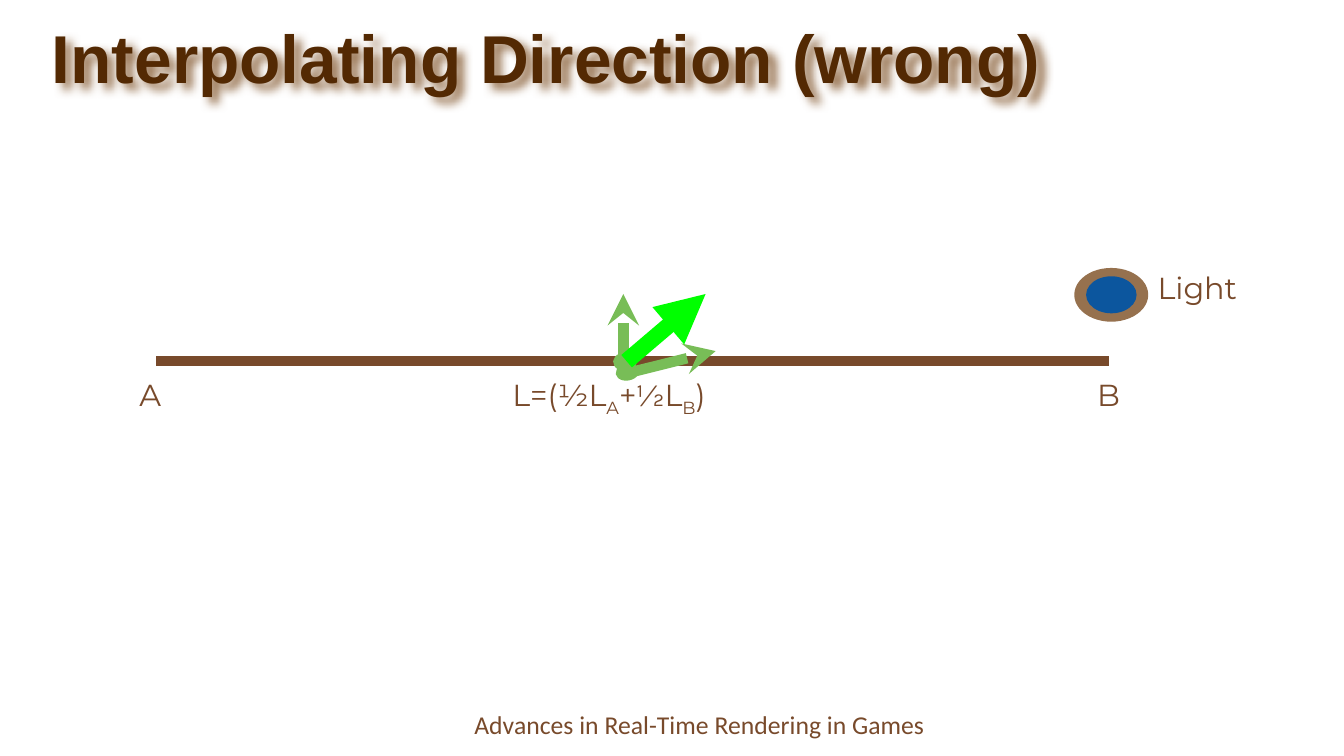
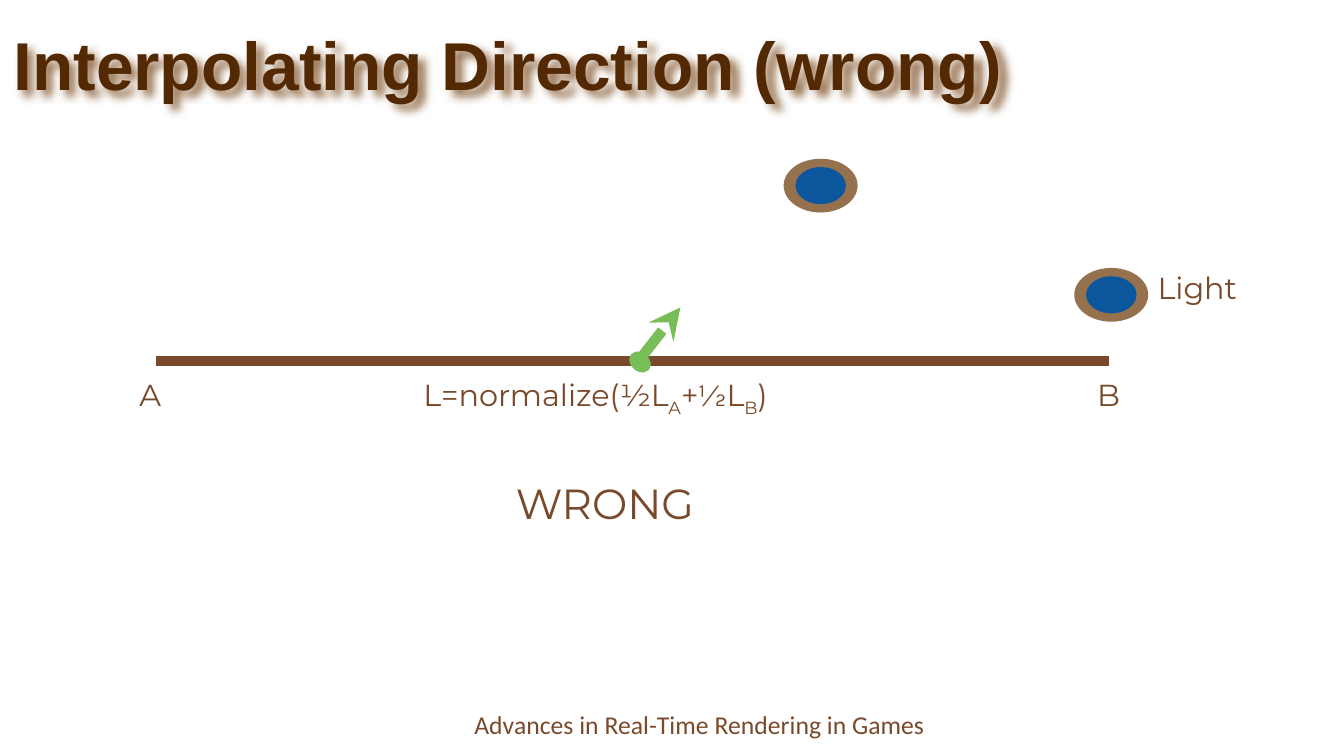
from dataclasses import dataclass

from lxml.etree import SubElement
from pptx import Presentation
from pptx.dml.color import RGBColor
from pptx.enum.shapes import MSO_CONNECTOR, MSO_SHAPE
from pptx.enum.text import MSO_ANCHOR, MSO_AUTO_SIZE, PP_ALIGN
from pptx.oxml.ns import qn
from pptx.slide import Slide
from pptx.util import Inches, Length, Pt

COLS, ROWS = 80, 45  # square grid cells across and down the slide
WIDTH, HEIGHT = Inches(8), Inches(4.5)


@dataclass(frozen=True)
class Theme:
    brown: str = "784A2B"
    title: str = "532903"
    shadow: str = "96714E"
    lamp_rim: str = "96714E"
    lamp_core: str = "0C569E"
    ray: str = "78BD57"
    result: str = "00FF00"
    background: str = "FFFFFF"
    title_font: str = "Arial"
    footer_font: str = "Calibri"
    label_font: str = "Montserrat"
    fraction_font: str = "Karla"
    title_pt: float = 29
    verdict_pt: float = 18
    label_pt: float = 13
    footer_pt: float = 11
    line_pt: float = 4.5
    result_pt: float = 7
    outline_pt: float = 0.75


THEME = Theme()


@dataclass(frozen=True)
class Box:
    """An area in grid columns and rows."""
    x: float
    y: float
    w: float
    h: float

    def emu(self) -> tuple[Length, ...]:
        return col(self.x), row(self.y), col(self.w), row(self.h)


@dataclass(frozen=True)
class Run:
    text: str
    font: str = THEME.label_font
    size: float = THEME.label_pt
    color: str = THEME.brown
    bold: bool = False
    sub: bool = False


@dataclass(frozen=True)
class Text:
    box: Box
    runs: tuple[Run, ...]
    wrap: bool = False
    align: PP_ALIGN = PP_ALIGN.LEFT
    anchor: MSO_ANCHOR = MSO_ANCHOR.TOP
    inset: tuple[float, float] = (0.7, 0.4)
    grow: bool = True


@dataclass(frozen=True)
class Arrow:
    start: tuple[float, float]
    end: tuple[float, float]
    color: str = THEME.ray
    width: float = THEME.line_pt
    head: str | None = "stealth"


@dataclass(frozen=True)
class Ray:
    """A direction vector with a dot at its origin."""
    dot: Box
    turn: float
    arrow: Arrow


def col(n: float) -> Length:
    return Length(round(WIDTH * n / COLS))


def row(n: float) -> Length:
    return Length(round(HEIGHT * n / ROWS))


def rgb(color: str) -> RGBColor:
    return RGBColor.from_string(color)


def add_text(slide: Slide, text: Text):
    sp = slide.shapes.add_textbox(*text.box.emu())
    tf = sp.text_frame
    tf.word_wrap = text.wrap
    tf.auto_size = (MSO_AUTO_SIZE.SHAPE_TO_FIT_TEXT if text.grow
                    else MSO_AUTO_SIZE.NONE)
    tf.vertical_anchor = text.anchor
    tf.margin_left = tf.margin_right = col(text.inset[0])
    tf.margin_top = tf.margin_bottom = row(text.inset[1])
    p = tf.paragraphs[0]
    p.alignment = text.align
    for run in text.runs:
        r = p.add_run()
        r.text = run.text
        r.font.name = run.font
        r.font.size = Pt(run.size)
        r.font.bold = run.bold
        r.font.color.rgb = rgb(run.color)
        if run.sub:
            r._r.get_or_add_rPr().set("baseline", "-25000")
    return sp


def add_title(slide: Slide, box: Box, align: PP_ALIGN) -> None:
    run = Run("Interpolating Direction (wrong)", THEME.title_font,
              THEME.title_pt, THEME.title, bold=True)
    sp = add_text(slide, Text(box, (run,), True, align, MSO_ANCHOR.MIDDLE,
                              (0.8, 0.4), grow=False))
    effects = SubElement(sp._element.spPr, qn("a:effectLst"))
    shadow = SubElement(effects, qn("a:outerShdw"), blurRad=str(Pt(4)),
                        dist=str(Pt(3)), dir="2700000", algn="tl")
    SubElement(shadow, qn("a:srgbClr"), val=THEME.shadow)


def add_ellipse(shapes, box: Box, color: str, turn: float = 0) -> None:
    sp = shapes.add_shape(MSO_SHAPE.OVAL, *box.emu())
    sp.shadow.inherit = False
    sp.rotation = turn
    sp.fill.solid()
    sp.fill.fore_color.rgb = rgb(color)
    sp.line.color.rgb = rgb(color)
    sp.line.width = Pt(THEME.outline_pt)


def add_arrow(shapes, arrow: Arrow) -> None:
    (x1, y1), (x2, y2) = arrow.start, arrow.end
    cx = shapes.add_connector(MSO_CONNECTOR.STRAIGHT,
                              col(x1), row(y1), col(x2), row(y2))
    cx.line.color.rgb = rgb(arrow.color)
    cx.line.width = Pt(arrow.width)
    if arrow.head:
        SubElement(cx.line._get_or_add_ln(), qn("a:tailEnd"), type=arrow.head)
    SubElement(cx._element.spPr, qn("a:effectLst"))


def add_ray(slide: Slide, ray: Ray) -> None:
    shapes = slide.shapes.add_group_shape().shapes
    add_ellipse(shapes, ray.dot, ray.arrow.color, ray.turn)
    add_arrow(shapes, ray.arrow)


def add_lamp(slide: Slide, x: float, y: float) -> None:
    shapes = slide.shapes.add_group_shape().shapes
    add_ellipse(shapes, Box(x, y, 4.3, 3.1), THEME.lamp_rim)
    add_ellipse(shapes, Box(x + 0.7, y + 0.5, 2.9, 2.1), THEME.lamp_core)


def average(opening: str) -> tuple[Run, ...]:
    """Runs of the half-and-half formula that starts with the given words."""
    return (Run(opening + "½L"), Run("A", sub=True), Run("+"),
            Run("½", THEME.fraction_font), Run("L"), Run("B", sub=True),
            Run(")"))


SURFACE_Y, LABEL_Y, LABEL_H = 21.5, 22, 2.9
SURFACE = Arrow((9.3, SURFACE_Y), (66, SURFACE_Y), THEME.brown, head=None)
FOOTER = Text(Box(12.5, 41.7, 58.3, 2.9),
              (Run("Advances in Real-Time Rendering in Games",
                   THEME.footer_font, THEME.footer_pt),),
              wrap=True, align=PP_ALIGN.CENTER, inset=(1, 0.5))
SCENE_LABELS = (
    Text(Box(7.6, LABEL_Y, 2.9, LABEL_H), (Run("A"),)),
    Text(Box(64.6, LABEL_Y, 2.9, LABEL_H), (Run("B"),)),
    Text(Box(68.2, 15.6, 9.2, LABEL_H), (Run("Light"),), wrap=True),
)
RAY_TO_B = Ray(Box(36.7, 21.7, 1.3, 0.9), 350.4,
               Arrow((37.4, 22.2), (42.6, 20.9)))
RAY_TO_A = Ray(Box(36.7, 20.9, 1, 1.3), 273.7,
               Arrow((37.1, SURFACE_Y), (37.1, 17.5)))
RAY_NORMALIZED = Ray(Box(37.6, 20.9, 1, 1.3), 311.5,
                     Arrow((38, SURFACE_Y), (40.5, 18.3)))
RESULT = Arrow((37.3, SURFACE_Y), (42, 17.5), THEME.result,
               THEME.result_pt, "triangle")


def new_slide(prs) -> Slide:
    slide = prs.slides.add_slide(prs.slide_layouts[6])
    slide.background.fill.solid()
    slide.background.fill.fore_color.rgb = rgb(THEME.background)
    add_text(slide, FOOTER)
    return slide


def add_scene(slide: Slide, rays: tuple[Ray, ...]) -> None:
    """Draw the surface from A to B, its light and the given rays."""
    add_arrow(slide.shapes, SURFACE)
    add_lamp(slide, 64, 16)
    for label in SCENE_LABELS:
        add_text(slide, label)
    for ray in rays:
        add_ray(slide, ray)


def build_sum_slide(prs) -> None:
    slide = new_slide(prs)
    add_scene(slide, (RAY_TO_B, RAY_TO_A))
    add_arrow(slide.shapes, RESULT)
    add_text(slide, Text(Box(29.8, LABEL_Y, 14.4, LABEL_H), average("L=(")))
    add_title(slide, Box(1.7, 0, 61.7, 6.7), PP_ALIGN.CENTER)


def build_normalized_slide(prs) -> None:
    slide = new_slide(prs)
    add_title(slide, Box(0, 0, 67.5, 7.5), PP_ALIGN.LEFT)
    add_scene(slide, (RAY_NORMALIZED,))
    add_text(slide, Text(Box(24.5, LABEL_Y, 24.2, LABEL_H),
                         average("L=normalize(")))
    add_text(slide, Text(Box(30, 28, 17.9, 3.8),
                         (Run("WRONG", size=THEME.verdict_pt),), wrap=True))
    add_lamp(slide, 46.7, 9.5)


def main() -> None:
    prs = Presentation()
    prs.slide_width, prs.slide_height = WIDTH, HEIGHT
    build_sum_slide(prs)
    build_normalized_slide(prs)
    prs.save("out.pptx")


if __name__ == "__main__":
    main()
